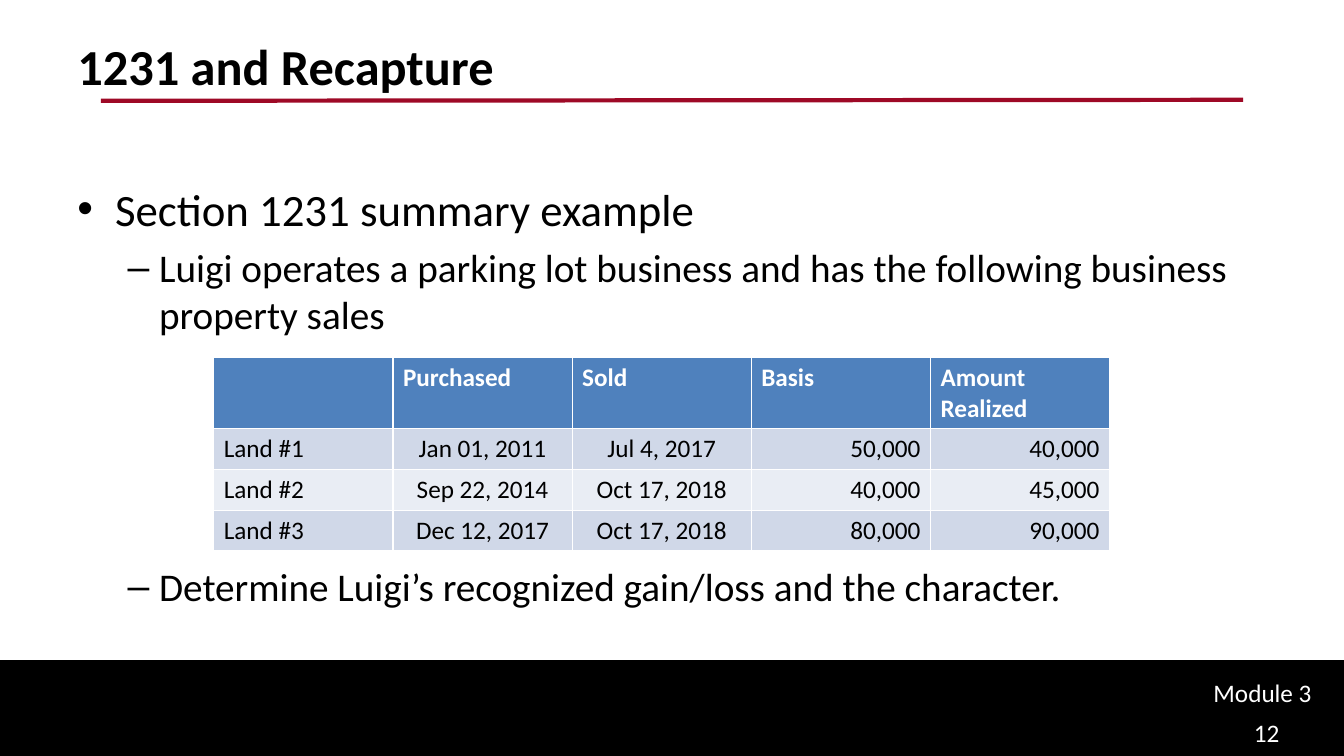
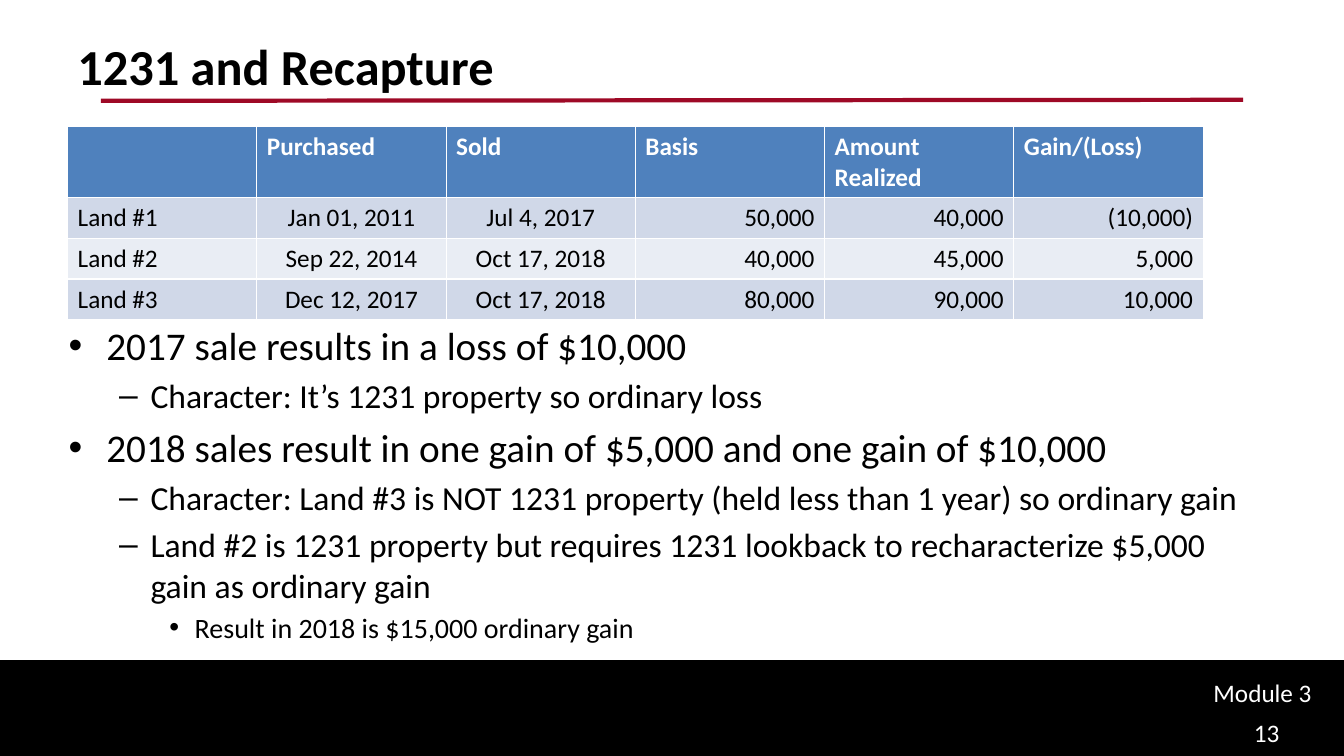
from dataclasses import dataclass

from lxml.etree import SubElement
from pptx import Presentation
from pptx.dml.color import RGBColor
from pptx.enum.shapes import MSO_CONNECTOR, MSO_SHAPE
from pptx.enum.text import MSO_ANCHOR, MSO_AUTO_SIZE, PP_ALIGN
from pptx.oxml.ns import qn
from pptx.util import Pt

FONT = "Calibri"
BLACK, WHITE, RED = "000000", "FFFFFF", "9E0926"
HEADER_FILL = "4F81BD"
BAND_FILLS = ("D0D8E8", "E9EDF4")
WIDTH, HEIGHT = 960, 540
BAND_TOP = 472.5
HEADER_HEIGHT, ROW_HEIGHT = 50.4, 29.2
FIRST_PAGE = 12


@dataclass(frozen=True)
class Box:
    left: float
    top: float
    width: float
    height: float


@dataclass(frozen=True)
class Item:
    text: str
    size: float
    level: int = 0
    space_before: float | None = None


@dataclass(frozen=True)
class Page:
    title: str
    body_box: Box
    items: tuple[Item, ...]
    table_left: float
    table_top: float
    column_width: float
    rows: tuple[tuple[str, ...], ...]


SALES = (
    ("", "Purchased", "Sold", "Basis", "Amount Realized"),
    ("Land #1", "Jan 01, 2011", "Jul 4, 2017", "50,000", "40,000"),
    ("Land #2", "Sep 22, 2014", "Oct 17, 2018", "40,000", "45,000"),
    ("Land #3", "Dec 12, 2017", "Oct 17, 2018", "80,000", "90,000"),
)
GAINS = ("Gain/(Loss)", "(10,000)", "5,000", "10,000")
ALIGNMENTS = (PP_ALIGN.LEFT, PP_ALIGN.CENTER, PP_ALIGN.CENTER,
              PP_ALIGN.RIGHT, PP_ALIGN.RIGHT, PP_ALIGN.RIGHT)

PAGES = (
    Page(
        "1231 and Recapture",
        Box(48, 126, 864, 309),
        (
            Item("Section 1231 summary example", 32),
            Item("Luigi operates a parking lot business and has the following "
                 "business property sales", 28, 1),
            # The wide gap leaves room for the table.
            Item("Determine Luigi’s recognized gain/loss and the character.",
                 28, 1, 161),
        ),
        152.7, 255.6, 128, SALES,
    ),
    Page(
        "1231 and Recapture",
        Box(41.8, 226, 870.5, 240),
        (
            Item("2017 sale results in a loss of $10,000", 28),
            Item("Character: It’s 1231 property so ordinary loss", 24, 1),
            Item("2018 sales result in one gain of $5,000 and one gain of "
                 "$10,000", 28),
            Item("Character: Land #3 is NOT 1231 property (held less than "
                 "1 year) so ordinary gain", 24, 1),
            Item("Land #2 is 1231 property but requires 1231 lookback to "
                 "recharacterize $5,000 gain as ordinary gain", 24, 1),
            Item("Result in 2018 is $15,000 ordinary gain", 20, 2),
        ),
        48.3, 90.5, 135.2,
        tuple(row + (gain,) for row, gain in zip(SALES, GAINS)),
    ),
)


def rgb(color: str) -> RGBColor:
    return RGBColor.from_string(color)


def style(p, size: float, color: str, bold: bool = False) -> None:
    p.font.name = FONT
    p.font.size = Pt(size)
    p.font.bold = bold
    p.font.color.rgb = rgb(color)


def place(sp, box: Box) -> None:
    sp.left, sp.top = Pt(box.left), Pt(box.top)
    sp.width, sp.height = Pt(box.width), Pt(box.height)


def add_label(slide, box: Box, text: str) -> None:
    sp = slide.shapes.add_textbox(Pt(box.left), Pt(box.top),
                                  Pt(box.width), Pt(box.height))
    tf = sp.text_frame
    tf.word_wrap = True
    tf.text = text
    style(tf.paragraphs[0], 18, WHITE)


def add_frame(slide, number: int) -> None:
    """Draw the title rule and the footer band with its labels."""
    band = slide.shapes.add_shape(MSO_SHAPE.RECTANGLE, 0, Pt(BAND_TOP),
                                  Pt(WIDTH), Pt(HEIGHT - BAND_TOP))
    band.shadow.inherit = False
    band.fill.solid()
    band.fill.fore_color.rgb = rgb(BLACK)
    band.line.color.rgb = rgb(BLACK)
    band.line.width = Pt(2)

    rule = slide.shapes.add_connector(MSO_CONNECTOR.STRAIGHT,
                                      Pt(72), Pt(72), Pt(888), Pt(71.3))
    rule.line.color.rgb = rgb(RED)
    rule.line.width = Pt(3)
    SubElement(rule._element.spPr, qn("a:effectLst"))

    add_label(slide, Box(859.7, 480.2, 95, 29), "Module 3")
    add_label(slide, Box(888.5, 509, 65.5, 31), str(number))


def fill_title(sp, text: str) -> None:
    place(sp, Box(48, 21.6, 864, 90))
    tf = sp.text_frame
    tf.auto_size = MSO_AUTO_SIZE.NONE
    tf.vertical_anchor = MSO_ANCHOR.TOP
    tf.text = text
    p = tf.paragraphs[0]
    p.alignment = PP_ALIGN.LEFT
    style(p, 36, BLACK, bold=True)


def fill_body(sp, box: Box, items: tuple[Item, ...]) -> None:
    place(sp, box)
    tf = sp.text_frame
    tf.auto_size = MSO_AUTO_SIZE.NONE
    for i, item in enumerate(items):
        p = tf.add_paragraph() if i else tf.paragraphs[0]
        p.text = item.text
        p.level = item.level
        if i == 0:
            p.space_before = Pt(0)
        elif item.space_before is not None:
            p.space_before = Pt(item.space_before)
        style(p, item.size, BLACK)


def add_sales_table(slide, page: Page) -> None:
    n_rows, n_cols = len(page.rows), len(page.rows[0])
    height = HEADER_HEIGHT + (n_rows - 1) * ROW_HEIGHT
    table = slide.shapes.add_table(
        n_rows, n_cols, Pt(page.table_left), Pt(page.table_top),
        Pt(n_cols * page.column_width), Pt(height)).table
    for column in table.columns:
        column.width = Pt(page.column_width)
    for i, row in enumerate(page.rows):
        header = i == 0
        table.rows[i].height = Pt(HEADER_HEIGHT if header else ROW_HEIGHT)
        for j, text in enumerate(row):
            cell = table.cell(i, j)
            cell.fill.solid()
            cell.fill.fore_color.rgb = rgb(
                HEADER_FILL if header else BAND_FILLS[(i - 1) % 2])
            cell.text = text
            p = cell.text_frame.paragraphs[0]
            p.alignment = PP_ALIGN.LEFT if header else ALIGNMENTS[j]
            style(p, 18, WHITE if header else BLACK, bold=header)


def main() -> None:
    prs = Presentation()
    prs.slide_width, prs.slide_height = Pt(WIDTH), Pt(HEIGHT)
    for number, page in enumerate(PAGES, FIRST_PAGE):
        slide = prs.slides.add_slide(prs.slide_layouts[1])
        fill_title(slide.shapes.title, page.title)
        fill_body(slide.placeholders[1], page.body_box, page.items)
        add_frame(slide, number)
        add_sales_table(slide, page)
    prs.save("out.pptx")


if __name__ == "__main__":
    main()
